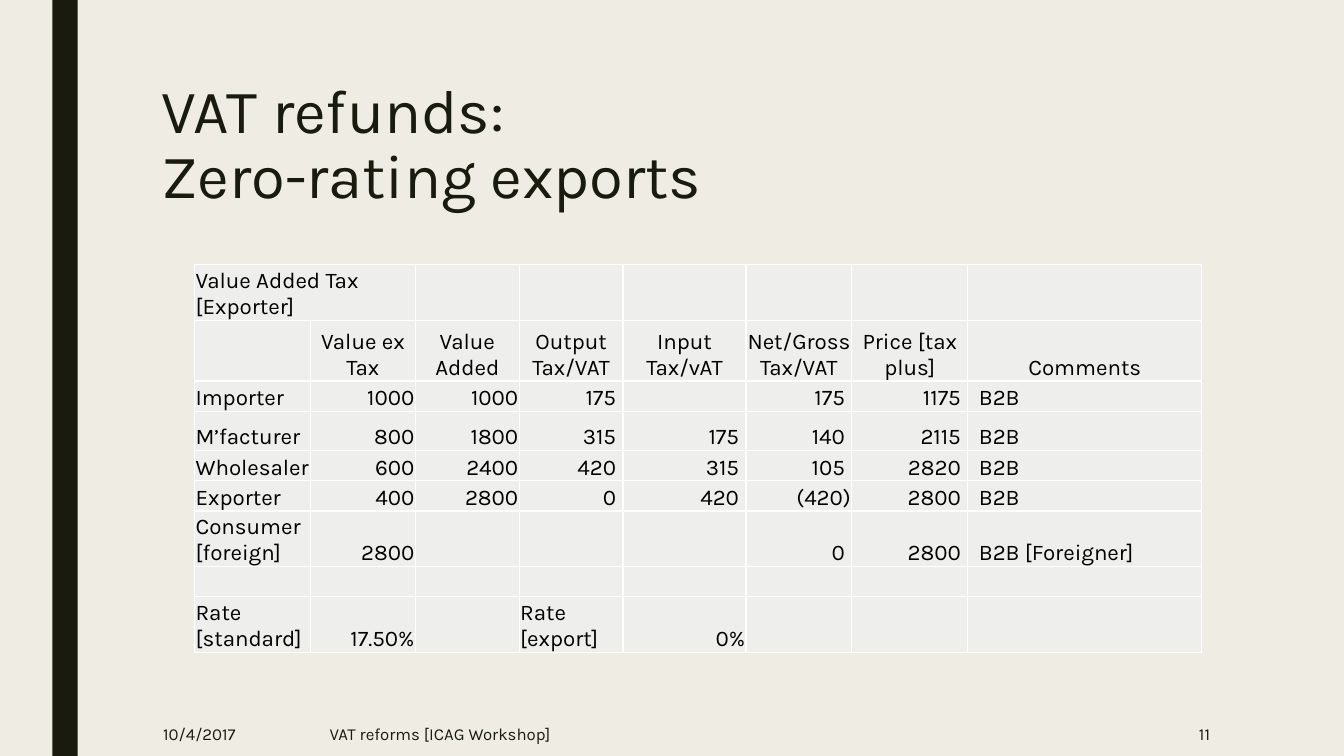
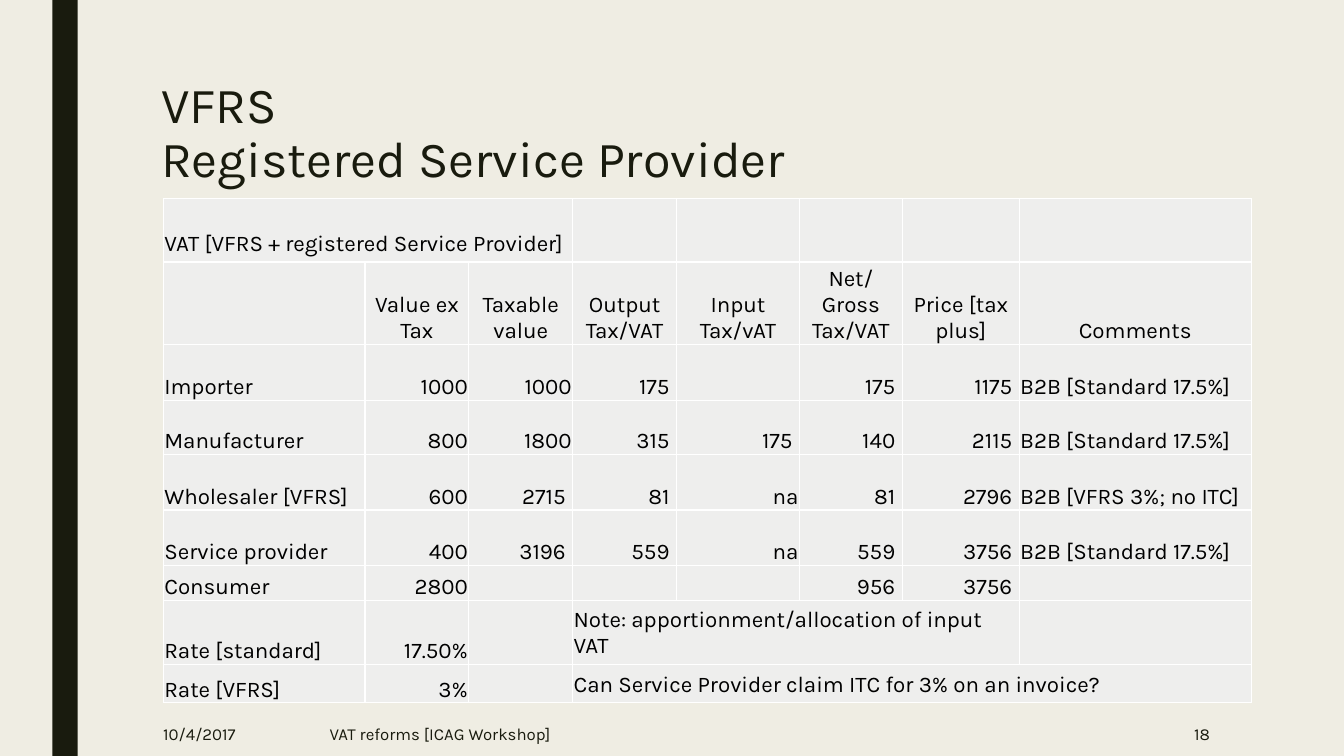
from dataclasses import dataclass

from lxml.etree import SubElement
from pptx import Presentation
from pptx.dml.color import RGBColor
from pptx.enum.shapes import MSO_SHAPE
from pptx.enum.text import MSO_ANCHOR, PP_ALIGN
from pptx.oxml.ns import qn
from pptx.util import Inches, Pt


@dataclass(frozen=True)
class Theme:
    font: str = "Karla"
    background: str = "EFEDE3"
    ink: str = "191B0E"
    table_ink: str = "000000"
    cell_fill: str = "EEEEED"
    border: str = "FFFFFF"
    border_width: float = 1
    table_size: int = 16
    footer_size: int = 12
    title_spacing: float = 0.89


THEME = Theme()
HEADER_ROW = 1
FIRST_TAX_COLUMN = 3
BRACKET_ROOM = 0.07  # leaves space for the closing bracket of negative amounts

EXPORT_ROWS = [
    ["Value Added Tax [Exporter]", "", "", "", "", "", "", ""],
    ["", "Value ex Tax", "Value Added", "Output Tax/VAT", "Input Tax/vAT",
     "Net/Gross Tax/VAT", "Price [tax plus]", "Comments"],
    ["Importer", "1000", "1000", "175", "", "175", "1175", "B2B"],
    ["M’facturer", "800", "1800", "315", "175", "140", "2115", "B2B"],
    ["Wholesaler", "600", "2400", "420", "315", "105", "2820", "B2B"],
    ["Exporter", "400", "2800", "0", "420", "(420)", "2800", "B2B"],
    ["Consumer [foreign]", "2800", "", "", "", "0", "2800", "B2B [Foreigner]"],
    ["", "", "", "", "", "", "", ""],
    ["Rate [standard]", "17.50%", "", "Rate [export]", "0%", "", "", ""],
]

SERVICE_ROWS = [
    ["VAT [VFRS + registered Service Provider]", "", "", "", "", "", "", ""],
    ["", "Value ex Tax", "Taxable value", "Output Tax/VAT", "Input Tax/vAT",
     "Net/Gross Tax/VAT", "Price [tax plus]", "Comments"],
    ["Importer", "1000", "1000", "175", "", "175", "1175", "B2B [Standard 17.5%]"],
    ["Manufacturer", "800", "1800", "315", "175", "140", "2115", "B2B [Standard 17.5%]"],
    ["Wholesaler [VFRS]", "600", "2715", "81", "na", "81", "2796", "B2B [VFRS 3%; no ITC]"],
    ["Service provider", "400", "3196", "559", "na", "559", "3756", "B2B [Standard 17.5%]"],
    ["Consumer", "2800", "", "", "", "956", "3756", ""],
    ["Rate [standard]", "17.50%", "", "Note: apportionment/allocation of input VAT",
     "", "", "", ""],
    ["Rate [VFRS]", "3%", "", "Can Service Provider claim ITC for 3% on an invoice?",
     "", "", "", ""],
]


def color(value):
    return RGBColor.from_string(value)


def write_text(frame, text, *, size, ink=THEME.ink, align=PP_ALIGN.LEFT, spacing=None):
    """Write one paragraph; a line break in the text stays a line break."""
    paragraph = frame.paragraphs[0]
    paragraph.alignment = align
    if spacing:
        paragraph.line_spacing = spacing
    for index, line in enumerate(text.split("\n")):
        if index:
            paragraph.add_line_break()
        if line:
            run = paragraph.add_run()
            run.text = line
            run.font.name = THEME.font
            run.font.size = Pt(size)
            run.font.color.rgb = color(ink)
    if not text:
        SubElement(paragraph._p, qn("a:endParaRPr"), sz=str(size * 100))


def add_text(slide, text, left, top, width, height, anchor=MSO_ANCHOR.TOP, **text_format):
    box = slide.shapes.add_textbox(Inches(left), Inches(top), Inches(width), Inches(height))
    box.text_frame.word_wrap = True
    box.text_frame.vertical_anchor = anchor
    write_text(box.text_frame, text, **text_format)


def add_footer(slide, number):
    entries = [
        ("10/4/2017", 1.52, 1.32, PP_ALIGN.LEFT),
        ("VAT reforms [ICAG Workshop]", 3.17, 6.87, PP_ALIGN.LEFT),
        (str(number), 10.35, 1.75, PP_ALIGN.RIGHT),
    ]
    for text, left, width, align in entries:
        add_text(slide, text, left, 7.06, width, 0.44, anchor=MSO_ANCHOR.MIDDLE,
                 size=THEME.footer_size, align=align)


def add_base_slide(presentation, title, title_size, title_height, number):
    slide = presentation.slides.add_slide(presentation.slide_layouts[6])
    slide.background.fill.solid()
    slide.background.fill.fore_color.rgb = color(THEME.background)
    band = slide.shapes.add_shape(
        MSO_SHAPE.RECTANGLE, Inches(0.52), 0, Inches(0.25), presentation.slide_height)
    band.shadow.inherit = False
    band.fill.solid()
    band.fill.fore_color.rgb = color(THEME.ink)
    band.line.fill.background()
    add_text(slide, title, 1.5, 0.75, 10.5, title_height,
             size=title_size, spacing=THEME.title_spacing)
    add_footer(slide, number)
    return slide


def add_borders(cell):
    properties = cell._tc.get_or_add_tcPr()
    for side in ("lnL", "lnR", "lnT", "lnB"):
        line = SubElement(properties, qn(f"a:{side}"), w=str(Pt(THEME.border_width)))
        fill = SubElement(line, qn("a:solidFill"))
        SubElement(fill, qn("a:srgbClr"), val=THEME.border)


def cell_alignment(text, row):
    if row == HEADER_ROW:
        return PP_ALIGN.CENTER
    if text == "na" or text[:1].isdigit() or text.startswith("("):
        return PP_ALIGN.RIGHT
    return PP_ALIGN.LEFT


def format_cell(cell, text, align, *, left=0.01, right=0.01, top=0.01, bottom=0):
    cell.margin_left, cell.margin_right = Inches(left), Inches(right)
    cell.margin_top, cell.margin_bottom = Inches(top), Inches(bottom)
    cell.vertical_anchor = MSO_ANCHOR.BOTTOM
    add_borders(cell)
    cell.fill.solid()
    cell.fill.fore_color.rgb = color(THEME.cell_fill)
    write_text(cell.text_frame, text, size=THEME.table_size, ink=THEME.table_ink, align=align)


def add_tax_table(slide, rows, left, top, widths, heights, spans, *,
                  comment_indent=0.01, span_padding=None, bracket_cells=()):
    """Spans map (row, column) to a column count; bracket_cells get bracket room too."""
    table = slide.shapes.add_table(
        len(rows), len(widths), Inches(left), Inches(top),
        Inches(sum(widths)), Inches(sum(heights))).table
    table.first_row = table.horz_banding = False
    for column, width in zip(table.columns, widths):
        column.width = Inches(width)
    for row, height in zip(table.rows, heights):
        row.height = Inches(height)

    for row_index, values in enumerate(rows):
        for column_index, text in enumerate(values):
            position = (row_index, column_index)
            margins = {}
            if text.isdigit() and (column_index >= FIRST_TAX_COLUMN or position in bracket_cells):
                margins["right"] = BRACKET_ROOM
            if column_index == len(widths) - 1 and row_index > HEADER_ROW:
                margins["left"] = comment_indent
            if span_padding and position in spans:
                margins.update(top=span_padding, bottom=span_padding)
            format_cell(table.cell(*position), text, cell_alignment(text, row_index), **margins)
    for (row_index, column_index), count in spans.items():
        table.cell(row_index, column_index).merge(
            table.cell(row_index, column_index + count - 1))


def main():
    presentation = Presentation()
    presentation.slide_width, presentation.slide_height = Inches(13.33), Inches(7.5)

    exports = add_base_slide(presentation, "VAT refunds:\nZero-rating exports", 44, 1.62, 11)
    add_tax_table(
        exports, EXPORT_ROWS, 1.93, 2.62,
        widths=[1.15, 1.04, 1.03, 1.03, 1.22, 1.05, 1.15, 2.32],
        heights=[0.56, 0.6, 0.3, 0.39, 0.3, 0.3, 0.55, 0.3, 0.55],
        spans={(0, 0): 2}, comment_indent=0.11)

    service = add_base_slide(presentation, "VFRS\nRegistered Service Provider", 36, 1.31, 18)
    add_tax_table(
        service, SERVICE_ROWS, 1.62, 1.97,
        widths=[2, 1.03, 1.03, 1.03, 1.22, 1.02, 1.16, 2.3],
        heights=[0.63, 0.82, 0.55, 0.54, 0.55, 0.55, 0.35, 0.63, 0.38],
        spans={(0, 0): 3, (7, 3): 4, (8, 3): 5}, span_padding=0.05,
        bracket_cells={(4, 2), (5, 2)})

    presentation.save("out.pptx")


if __name__ == "__main__":
    main()
